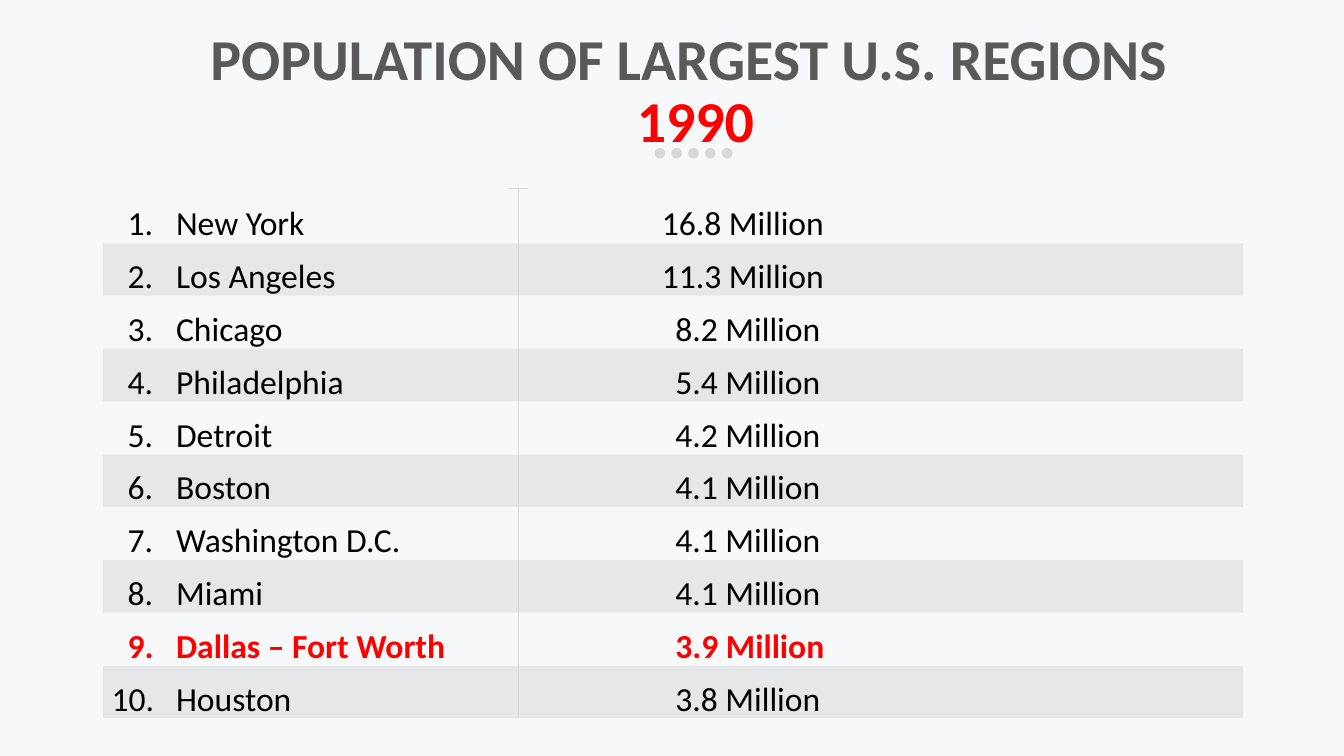
"""Builds a slide that ranks the largest U.S. regions by population in 1990."""
from pptx import Presentation
from pptx.dml.color import RGBColor
from pptx.enum.shapes import MSO_CONNECTOR as CONNECTOR, MSO_SHAPE as SHAPE
from pptx.enum.text import MSO_ANCHOR as ANCHOR, PP_ALIGN as ALIGN
from pptx.oxml.ns import qn
from pptx.util import Inches, Pt
from lxml.etree import SubElement

FONT = "Calibri"
BACKGROUND, GREY, TITLE_GREY = "F6F8FA", "D8D8D8", "595959"
BLACK, RED = "000000", "FF0000"
ROWS_TOP, ROW_PITCH, ROW_HEIGHT = 2.94, 0.786, 0.61
BAND_LEFT, BAND_TOP, BAND_WIDTH, BAND_HEIGHT = 1.53, 3.62, 16.97, 0.78
DIVIDER_X, DIVIDER_TOP, DIVIDER_BOTTOM = 7.71, 2.81, 10.69
NAME_X, INSET_X, INSET_Y = 2.62, 0.15, 0.07
HIGHLIGHTED = "Dallas – Fort Worth"
REGIONS = [
    ("New York", "16.8"), ("Los Angeles", "11.3"), ("Chicago", "8.2"),
    ("Philadelphia", "5.4"), ("Detroit", "4.2"), ("Boston", "4.1"),
    ("Washington D.C.", "4.1"), ("Miami", "4.1"),
    (HIGHLIGHTED, "3.9"), ("Houston", "3.8"),
]


def rgb(code):
    """Turn a hex string into a colour."""
    return RGBColor.from_string(code)


def add_solid(shapes, kind, left, top, width, height, opacity=100):
    """Add a grey borderless shape with the given opacity in percent."""
    solid = shapes.add_shape(kind, *map(Inches, (left, top, width, height)))
    solid.shadow.inherit = False
    solid.fill.solid()
    solid.fill.fore_color.rgb = rgb(GREY)
    solid.line.fill.background()
    if opacity < 100:
        colour = solid.fill._xPr.find(".//" + qn("a:srgbClr"))
        SubElement(colour, qn("a:alpha"), val=str(opacity * 1000))


def add_rule(slide, x1, y1, x2, y2):
    """Add a thin grey line between two points."""
    rule = slide.shapes.add_connector(CONNECTOR.STRAIGHT, *map(Inches, (x1, y1, x2, y2)))
    rule.line.color.rgb = rgb(GREY)
    rule.line.width = Pt(0.75)
    SubElement(rule._element.spPr, qn("a:effectLst"))


def add_text(slide, text, left, top, width, height, size, colour, bold=False, tab=None):
    """Add a text box, with an optional tab stop, and return its paragraph."""
    frame = slide.shapes.add_textbox(*map(Inches, (left, top, width, height))).text_frame
    frame.word_wrap = True
    frame.vertical_anchor = ANCHOR.TOP
    frame.margin_left = frame.margin_right = Inches(INSET_X)
    frame.margin_top = frame.margin_bottom = Inches(INSET_Y)
    paragraph = frame.paragraphs[0]
    paragraph.text = text
    if tab:
        stops = SubElement(paragraph._p.get_or_add_pPr(), qn("a:tabLst"))
        SubElement(stops, qn("a:tab"), pos=str(Inches(tab)), algn="l")
    for run in paragraph.runs:
        run.font.name = FONT
        run.font.size = Pt(size)
        run.font.bold = bold
        run.font.color.rgb = rgb(colour)
    return paragraph


def add_title(slide):
    """Add the two-line title with the year in red, and the dots below it."""
    title = add_text(slide, "POPULATION OF LARGEST U.S. REGIONS \v1990",
                     1.49, 0.38, 17.72, 1.09, 62, TITLE_GREY, bold=True)
    title.alignment = ALIGN.CENTER
    title.line_spacing = 0.9
    title.runs[-1].font.color.rgb = rgb(RED)
    dots = slide.shapes.add_group_shape()
    for column in range(5):
        add_solid(dots.shapes, SHAPE.OVAL, 9.74 + 0.25 * column, 2.2, 0.16, 0.16)


def add_region(slide, row, name, millions):
    """Add the rank, name and population of one region."""
    top = ROWS_TOP + row * ROW_PITCH
    highlighted = name == HIGHLIGHTED
    style = (36, RED if highlighted else BLACK, highlighted)
    rank = f"{row + 1}."
    rank_left = 1.51 if len(rank) > 2 else 1.75
    value_left = 9.7 if len(millions) > 3 else 9.9
    add_text(slide, f"{millions} Million", value_left, top, 3.21, ROW_HEIGHT, *style)
    add_text(slide, f"{rank}\t{name}", rank_left, top, 5.81, ROW_HEIGHT, *style,
             tab=NAME_X - rank_left - INSET_X)


def main():
    """Build the slide and save it."""
    deck = Presentation()
    deck.slide_width, deck.slide_height = Inches(20), Inches(11.25)
    slide = deck.slides.add_slide(deck.slide_layouts[6])
    slide.background.fill.solid()
    slide.background.fill.fore_color.rgb = rgb(BACKGROUND)
    for band in range(len(REGIONS) // 2):
        add_solid(slide.shapes, SHAPE.RECTANGLE, BAND_LEFT,
                  BAND_TOP + 2 * band * ROW_PITCH, BAND_WIDTH, BAND_HEIGHT, opacity=50)
    add_title(slide)
    add_rule(slide, DIVIDER_X, DIVIDER_TOP, DIVIDER_X, DIVIDER_BOTTOM)
    add_rule(slide, DIVIDER_X - 0.15, DIVIDER_TOP, DIVIDER_X + 0.15, DIVIDER_TOP)
    for row, (name, millions) in enumerate(REGIONS):
        add_region(slide, row, name, millions)
    deck.save("out.pptx")


if __name__ == "__main__":
    main()
